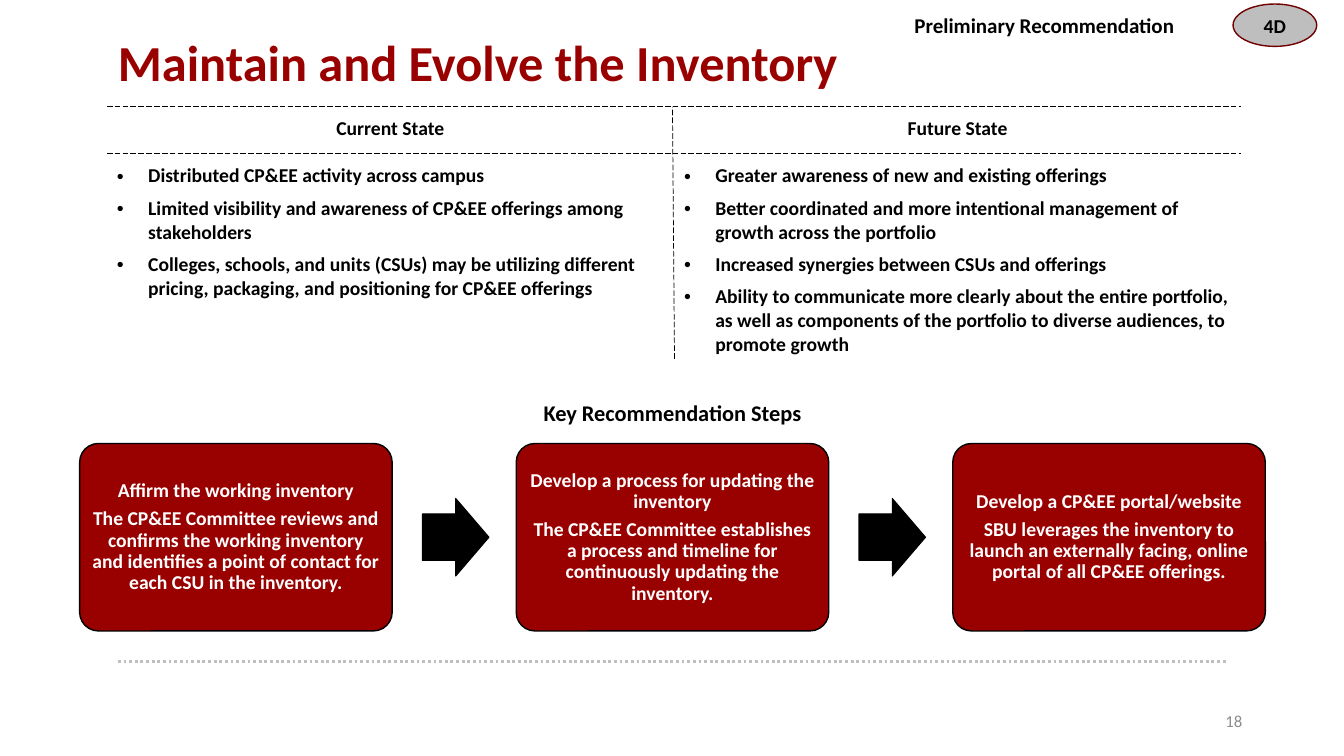
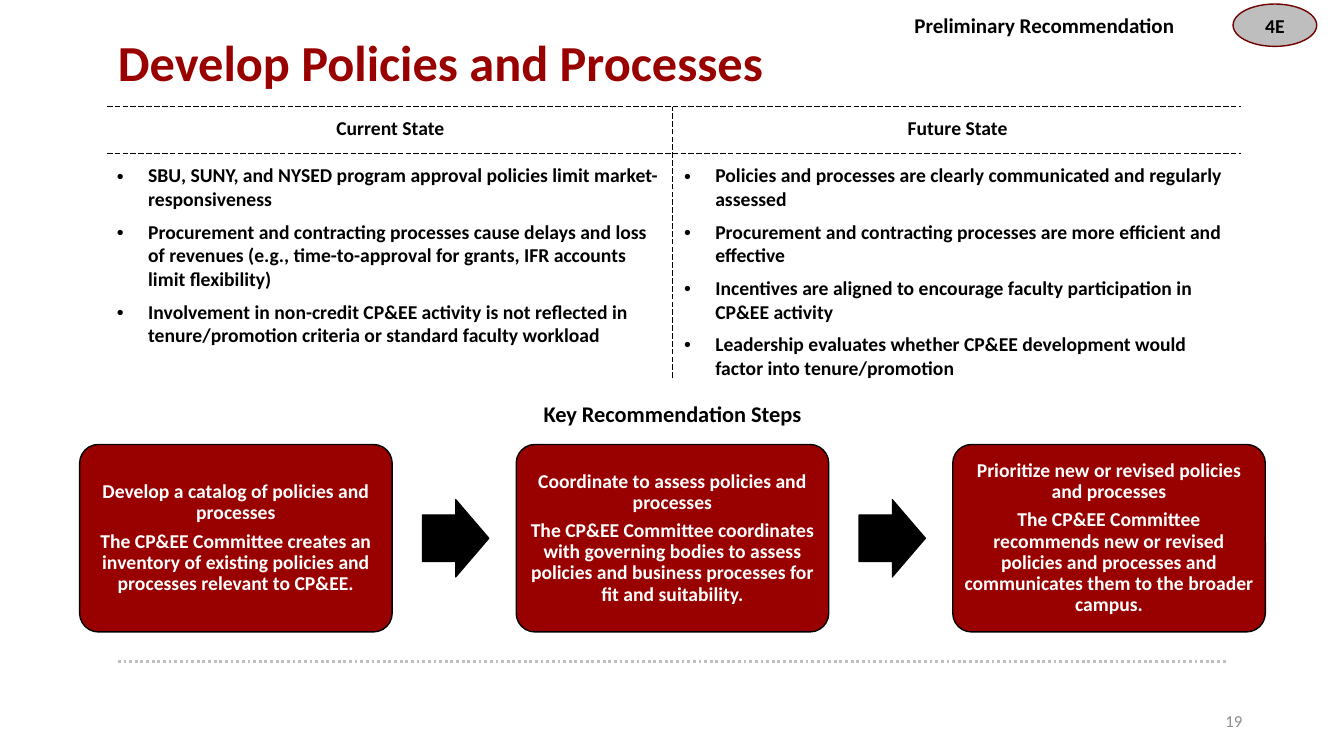
from lxml.etree import SubElement
from pptx import Presentation
from pptx.dml.color import RGBColor
from pptx.enum.dml import MSO_LINE
from pptx.enum.shapes import MSO_CONNECTOR, MSO_SHAPE
from pptx.enum.text import MSO_ANCHOR, PP_ALIGN
from pptx.oxml.ns import qn
from pptx.util import Inches, Pt

FONT = "Calibri"
RED, DARK_RED, BLACK, WHITE = "990000", "710000", "000000", "FFFFFF"
BADGE_GRAY, RULE_GRAY, NUMBER_GRAY = "BEBEBE", "BFBFBF", "8C8C8C"

TABLE_LEFT, TABLE_TOP, TABLE_WIDTH, HEADER_HEIGHT = 1.06, 0.98, 11.25, 0.6
TABLE_RULES = (1.52, 1.06)
BULLET_INDENT = 0.31
CARD_LEFT, CARD_WIDTH, CARD_HEIGHT, CARD_PITCH = 0.79, 3.1, 1.86, 4.33
ARROW_GAP, ARROW_WIDTH, ARROW_HEIGHT = 0.3, 0.66, 0.77

SLIDES = [
    {
        "title": "Maintain and Evolve the Inventory",
        "badge": "4D",
        "number": "18",
        "table_height": 2.58,
        "divider_foot": (6.69, 3.56),
        "cards_top": 4.4,
        "states": {
            "Current State": [
                "Distributed CP&EE activity across campus",
                "Limited visibility and awareness of CP&EE offerings among stakeholders",
                "Colleges, schools, and units (CSUs) may be utilizing different pricing, "
                "packaging, and positioning for CP&EE offerings",
            ],
            "Future State": [
                "Greater awareness of new and existing offerings",
                "Better coordinated and more intentional management of growth across the portfolio",
                "Increased synergies between CSUs and offerings",
                "Ability to communicate more clearly about the entire portfolio, as well as "
                "components of the portfolio to diverse audiences, to promote growth",
            ],
        },
        "steps": [
            ("Affirm the working inventory",
             "The CP&EE Committee reviews and confirms the working inventory and "
             "identifies a point of contact for each CSU in the inventory."),
            ("Develop a process for updating the inventory",
             "The CP&EE Committee establishes a process and timeline for "
             "continuously updating the inventory."),
            ("Develop a CP&EE portal/website",
             "SBU leverages the inventory to launch an externally facing, online "
             "portal of all CP&EE offerings."),
        ],
    },
    {
        "title": "Develop Policies and Processes",
        "badge": "4E",
        "number": "19",
        "table_height": 2.82,
        "divider_foot": (6.67, 3.75),
        "cards_top": 4.41,
        "states": {
            "Current State": [
                "SBU, SUNY, and NYSED program approval policies limit market-responsiveness",
                "Procurement and contracting processes cause delays and loss of revenues "
                "(e.g., time-to-approval for grants, IFR accounts limit flexibility)",
                "Involvement in non-credit CP&EE activity is not reflected in "
                "tenure/promotion criteria or standard faculty workload",
            ],
            "Future State": [
                "Policies and processes are clearly communicated and regularly assessed",
                "Procurement and contracting processes are more efficient and effective",
                "Incentives are aligned to encourage faculty participation in CP&EE activity",
                "Leadership evaluates whether CP&EE development would factor into tenure/promotion",
            ],
        },
        "steps": [
            ("Develop a catalog of policies and processes",
             "The CP&EE Committee creates an inventory of existing policies and "
             "processes relevant to CP&EE."),
            ("Coordinate to assess policies and processes",
             "The CP&EE Committee coordinates with governing bodies to assess policies "
             "and business processes for fit and suitability."),
            ("Prioritize new or revised policies and processes",
             "The CP&EE Committee recommends new or revised policies and processes and "
             "communicates them to the broader campus."),
        ],
    },
]


def rgb(color):
    return RGBColor.from_string(color)


def write(frame, texts, size=14, color=BLACK, bold=True, align=PP_ALIGN.LEFT,
          space_after=None, line_spacing=None, bullets=False):
    """Fill a text frame with one paragraph per text."""
    for index, text in enumerate(texts):
        paragraph = frame.paragraphs[0] if index == 0 else frame.add_paragraph()
        if bullets:
            properties = paragraph._p.get_or_add_pPr()
            properties.set("marL", str(Inches(BULLET_INDENT)))
            properties.set("indent", str(-Inches(BULLET_INDENT)))
            SubElement(properties, qn("a:buFont"), typeface="Arial")
            SubElement(properties, qn("a:buChar"), char="•")
        paragraph.alignment = align
        if space_after is not None:
            paragraph.space_after = Pt(space_after)
        if line_spacing is not None:
            paragraph.line_spacing = line_spacing
        run = paragraph.add_run()
        run.text = text
        run.font.name = FONT
        run.font.size = Pt(size)
        run.font.bold = bold
        run.font.color.rgb = rgb(color)


def set_frame(frame, margin=0, anchor=MSO_ANCHOR.TOP):
    frame.word_wrap = True
    frame.vertical_anchor = anchor
    frame.margin_left = frame.margin_right = Inches(margin)
    frame.margin_top = frame.margin_bottom = Inches(margin)


def add_text(slide, box, text, anchor=MSO_ANCHOR.TOP, margin=0, **style):
    frame = slide.shapes.add_textbox(*map(Inches, box)).text_frame
    set_frame(frame, margin, anchor)
    write(frame, [text], **style)


def add_shape(slide, kind, box, fill, line, line_width=1):
    shape = slide.shapes.add_shape(kind, *map(Inches, box))
    shape.shadow.inherit = False
    shape.fill.solid()
    shape.fill.fore_color.rgb = rgb(fill)
    shape.line.color.rgb = rgb(line)
    shape.line.width = Pt(line_width)
    return shape


def add_line(slide, start, end, color=BLACK, width=0.5, dash=MSO_LINE.LONG_DASH):
    connector = slide.shapes.add_connector(
        MSO_CONNECTOR.STRAIGHT, *map(Inches, (*start, *end)))
    connector.line.color.rgb = rgb(color)
    connector.line.width = Pt(width)
    connector.line.dash_style = dash
    SubElement(connector._element.spPr, qn("a:effectLst"))


def add_frame(slide, content):
    """Add the title, badge, footer rule and number that every slide has."""
    add_line(slide, (1.17, 6.56), (12.17, 6.56), RULE_GRAY, 2, MSO_LINE.ROUND_DOT)
    add_text(slide, (1.17, 0.3, 11, 0.61), content["title"],
             MSO_ANCHOR.MIDDLE, size=36, color=RED)
    add_text(slide, (9.07, 0.12, 3.16, 0.25), "Preliminary Recommendation", size=15)
    badge = add_shape(slide, MSO_SHAPE.OVAL, (12.23, 0.04, 0.83, 0.42),
                      BADGE_GRAY, DARK_RED)
    set_frame(badge.text_frame, anchor=MSO_ANCHOR.MIDDLE)
    write(badge.text_frame, [content["badge"]], align=PP_ALIGN.CENTER)
    add_text(slide, (9.42, 6.95, 3, 0.4), content["number"], MSO_ANCHOR.MIDDLE, 0.1,
             size=12, color=NUMBER_GRAY, bold=False, align=PP_ALIGN.RIGHT)


def add_states(slide, states, height, divider_foot):
    box = (TABLE_LEFT, TABLE_TOP, TABLE_WIDTH, height)
    table = slide.shapes.add_table(2, len(states), *map(Inches, box)).table
    table.first_row = table.horz_banding = False
    table.rows[0].height = Inches(HEADER_HEIGHT)
    table.rows[1].height = Inches(height - HEADER_HEIGHT)
    for column, (heading, points) in enumerate(states.items()):
        header, body = table.cell(0, column), table.cell(1, column)
        header.fill.background()
        body.fill.background()
        header.vertical_anchor = MSO_ANCHOR.MIDDLE
        write(header.text_frame, [heading], align=PP_ALIGN.CENTER)
        write(body.text_frame, points, space_after=6, bullets=True)
    for top in TABLE_RULES:
        add_line(slide, (TABLE_LEFT, top), (TABLE_LEFT + TABLE_WIDTH, top))
    add_line(slide, divider_foot, (6.67, min(TABLE_RULES)))


def add_steps(slide, steps, top):
    add_text(slide, (0.78, top - 0.44, 11.78, 0.27), "Key Recommendation Steps",
             size=16, align=PP_ALIGN.CENTER)
    arrow_top = top + (CARD_HEIGHT - ARROW_HEIGHT) / 2
    for index, step in enumerate(steps):
        left = CARD_LEFT + index * CARD_PITCH
        card = add_shape(slide, MSO_SHAPE.ROUNDED_RECTANGLE,
                         (left, top, CARD_WIDTH, CARD_HEIGHT), RED, BLACK)
        card.adjustments[0] = 0.1
        set_frame(card.text_frame, 0.06, MSO_ANCHOR.MIDDLE)
        write(card.text_frame, step, color=WHITE, align=PP_ALIGN.CENTER,
              space_after=5, line_spacing=0.9)
        if index < len(steps) - 1:
            arrow_left = left + CARD_WIDTH + ARROW_GAP
            arrow = add_shape(slide, MSO_SHAPE.RIGHT_ARROW,
                              (arrow_left, arrow_top, ARROW_WIDTH, ARROW_HEIGHT),
                              BLACK, BLACK, 0.75)
            arrow.adjustments[0] = 0.6
            arrow.adjustments[1] = 0.5


def main():
    presentation = Presentation()
    presentation.slide_width = Inches(13.33)
    presentation.slide_height = Inches(7.5)
    for content in SLIDES:
        slide = presentation.slides.add_slide(presentation.slide_layouts[6])
        add_frame(slide, content)
        add_states(slide, content["states"], content["table_height"],
                   content["divider_foot"])
        add_steps(slide, content["steps"], content["cards_top"])
    presentation.save("out.pptx")


if __name__ == "__main__":
    main()
